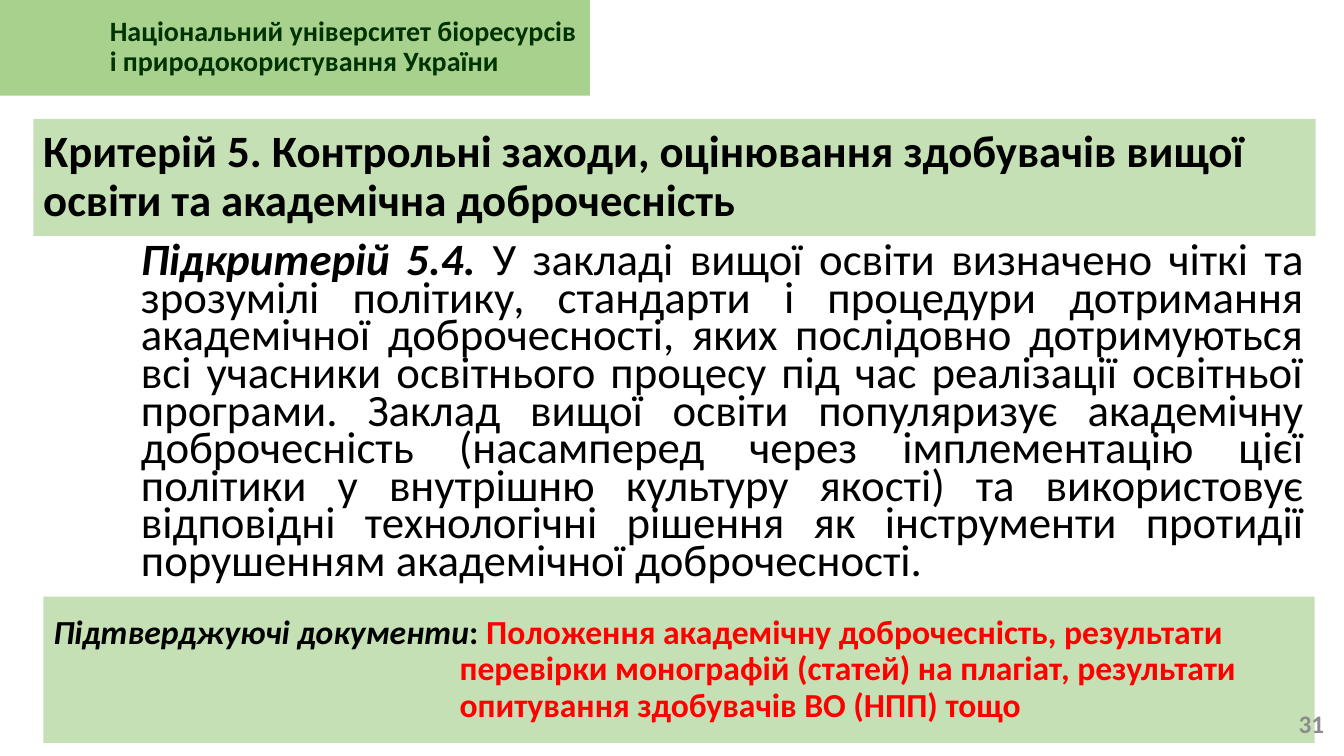
from dataclasses import dataclass

from pptx import Presentation
from pptx.dml.color import RGBColor
from pptx.enum.shapes import MSO_SHAPE as SHAPE
from pptx.enum.text import MSO_ANCHOR as ANCHOR, PP_ALIGN as ALIGN
from pptx.util import Inches, Pt


@dataclass(frozen=True)
class Theme:
    font: str = "Calibri"
    header_fill: str = "A9D18E"
    panel_fill: str = "C5E0B4"
    header_text: str = "003300"
    text: str = "000000"
    accent: str = "FF0000"
    muted: str = "8C8C8C"
    large: int = 32
    medium: int = 24
    small: int = 20
    number: int = 18


THEME = Theme()


def rgb(value):
    return RGBColor.from_string(value)


def write(shape, runs, size, color=THEME.text, align=ALIGN.LEFT,
          spacing=0.9, left=0, first=0):
    """Fill a shape with one paragraph; runs are (text, format) pairs."""
    tf = shape.text_frame
    tf.word_wrap = True
    tf.vertical_anchor = ANCHOR.MIDDLE
    p = tf.paragraphs[0]
    p.alignment = align
    p.line_spacing = spacing
    pPr = p._p.get_or_add_pPr()
    pPr.set("marL", str(Inches(left)))
    pPr.set("indent", str(Inches(first)))
    for text, fmt in runs:
        r = p.add_run()
        r.text = text
        r.font.name = THEME.font
        r.font.size = Pt(size)
        r.font.bold = fmt.get("bold", True)
        r.font.italic = fmt.get("italic", False)
        r.font.color.rgb = rgb(fmt.get("color", color))


def add_panel(s, box, fill, runs, size, **fmt):
    sp = s.shapes.add_shape(SHAPE.RECTANGLE, *map(Inches, box))
    sp.shadow.inherit = False
    sp.fill.solid()
    sp.fill.fore_color.rgb = rgb(fill)
    sp.line.fill.background()
    write(sp, runs, size, **fmt)


def add_text(s, box, runs, size, **fmt):
    sp = s.shapes.add_textbox(*map(Inches, box))
    write(sp, runs, size, **fmt)


def main():
    prs = Presentation()
    prs.slide_width, prs.slide_height = Inches(13.33), Inches(7.5)
    s = prs.slides.add_slide(prs.slide_layouts[6])

    # University header
    add_panel(s, (0, -0.01, 5.85, 0.96), THEME.header_fill, [
        ("Національний університет біоресурсів і природокористування України", {}),
    ], THEME.small, color=THEME.header_text, left=0.99)

    # Criterion title
    add_panel(s, (0.33, 1.18, 12.72, 1.16), THEME.panel_fill, [
        ("Критерій 5. Контрольні заходи, оцінювання здобувачів вищої освіти "
         "та академічна доброчесність", {}),
    ], THEME.large)

    # Sub-criterion
    add_text(s, (1.3, 2.31, 11.74, 3.61), [
        ("Підкритерій 5.4. ", {"italic": True}),
        ("У закладі вищої освіти визначено чіткі та зрозумілі політику, "
         "стандарти і процедури дотримання академічної доброчесності, яких "
         "послідовно дотримуються всі учасники освітнього процесу під час "
         "реалізації освітньої програми. Заклад вищої освіти популяризує "
         "академічну доброчесність (насамперед через імплементацію цієї "
         "політики у внутрішню культуру якості) та використовує відповідні "
         "технологічні рішення як інструменти протидії порушенням "
         "академічної доброчесності.", {"bold": False}),
    ], THEME.large, align=ALIGN.JUSTIFY, spacing=0.7)

    # Supporting documents, with a hanging indent
    add_panel(s, (0.43, 5.92, 12.61, 1.45), THEME.panel_fill, [
        ("Підтверджуючі документи", {"italic": True}),
        (": ", {}),
        ("Положення академічну доброчесність, результати перевірки "
         "монографій (статей) на плагіат, результати опитування здобувачів "
         "ВО (НПП) тощо", {"color": THEME.accent}),
    ], THEME.medium, left=4.03, first=-4.03)

    # Slide number
    add_text(s, (12.74, 6.98, 0.49, 0.4), [("31", {})], THEME.number,
             color=THEME.muted, align=ALIGN.RIGHT, spacing=1.0)

    prs.save("out.pptx")


if __name__ == "__main__":
    main()
